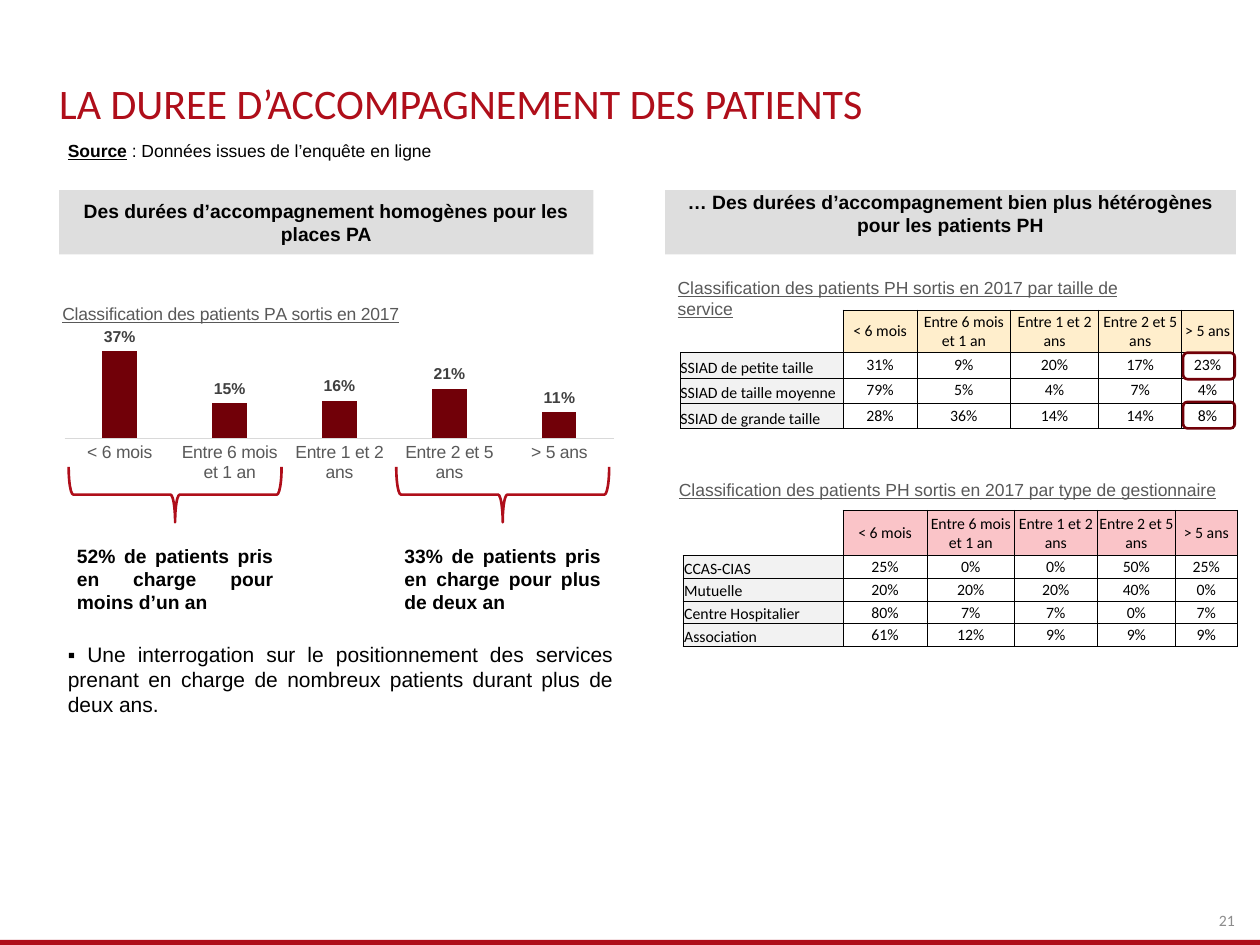
from lxml import etree
from pptx import Presentation
from pptx.chart.data import CategoryChartData
from pptx.dml.color import RGBColor
from pptx.enum.chart import XL_CHART_TYPE as CT, XL_LABEL_POSITION as LP, XL_TICK_MARK as TM
from pptx.enum.shapes import MSO_SHAPE as SHAPE
from pptx.enum.text import MSO_ANCHOR as ANCHOR, PP_ALIGN as ALIGN
from pptx.oxml import parse_xml
from pptx.oxml.ns import nsdecls, qn
from pptx.util import Inches, Pt

RED = RGBColor(0xAF, 0x0E, 0x1A)
DARK_RED = RGBColor(0x71, 0x00, 0x08)
BLACK = RGBColor(0, 0, 0)
WHITE = RGBColor(0xFF, 0xFF, 0xFF)
GREY = RGBColor(0x59, 0x59, 0x59)
LABEL_GREY = RGBColor(0x40, 0x40, 0x40)
PAGE_GREY = RGBColor(0x8C, 0x8C, 0x8C)
AXIS_GREY = RGBColor(0xD9, 0xD9, 0xD9)
BAND = RGBColor(0xDE, 0xDE, 0xDE)
ROW_HEAD = RGBColor(0xF2, 0xF2, 0xF2)
CREAM = RGBColor(0xFF, 0xEE, 0xCC)
PINK = RGBColor(0xFA, 0xC4, 0xC8)

prs = Presentation()
prs.slide_width, prs.slide_height = Inches(10), Inches(7.5)
W, H = prs.slide_width, prs.slide_height
s = prs.slides.add_slide(prs.slide_layouts[5])


def place(left, top, width, height):
    """Turn percentages of the slide into lengths."""
    return [int(v * size / 100) for v, size in zip((left, top, width, height), (W, H, W, H))]


def write(tf, runs, align=ALIGN.LEFT, anchor=ANCHOR.TOP, insets=(0.1, 0.05, 0.1, 0.05), **fmt):
    """Fill a text frame with one paragraph; each run is (text, extra format)."""
    tf.word_wrap = True
    tf.vertical_anchor = anchor
    for side, inset in zip(("left", "top", "right", "bottom"), insets):
        setattr(tf, f"margin_{side}", Inches(inset))
    p = tf.paragraphs[0]
    p.alignment = align
    for text, extra in runs:
        r = p.add_run()
        r.text = text
        look = {"name": "Arial", "size": 10, "color": BLACK, **fmt, **extra}
        r.font.color.rgb = look.pop("color")
        look["size"] = Pt(look["size"])
        for key, value in look.items():
            setattr(r.font, key, value)
    return p


# Bottom strip and page number
strip = s.shapes.add_shape(SHAPE.RECTANGLE, *place(0, 99.47, 100, 0.53))
strip.shadow.inherit = False
strip.fill.solid()
strip.fill.fore_color.rgb = RED
strip.line.fill.background()
page = s.shapes.add_textbox(*place(95.5, 96.4, 2.5, 2))
write(page.text_frame, [("21", {})], ALIGN.RIGHT, insets=(0, 0, 0, 0),
      name="Calibri", size=9, color=PAGE_GREY)

# Title
title = s.shapes.title
title.left, title.top, title.width, title.height = place(4.7, 8.93, 90.6, 4.67)
p = write(title.text_frame, [("LA DUREE D’ACCOMPAGNEMENT DES PATIENTS", {})], anchor=ANCHOR.MIDDLE,
          insets=(0, 0, 0, 0), name="Calibri", size=24, color=RED)
p.line_spacing = 0.85

# Source line
source = s.shapes.add_textbox(*place(4.4, 14.13, 62.5, 3.6))
write(source.text_frame, [("Source", {"bold": True, "underline": True}),
                          (" : Données issues de l’enquête en ligne", {})])

# Column headings
for left, width, anchor, top_inset, text in (
    (4.7, 42.4, ANCHOR.MIDDLE, 0.05, "Des durées d’accompagnement homogènes pour les places PA"),
    (52.8, 45.3, ANCHOR.TOP, 0,
     "… Des durées d’accompagnement bien plus hétérogènes pour les patients PH"),
):
    sp = s.shapes.add_shape(SHAPE.RECTANGLE, *place(left, 20.13, width, 6.8))
    sp.shadow.inherit = False
    sp.fill.solid()
    sp.fill.fore_color.rgb = BAND
    sp.line.fill.background()
    write(sp.text_frame, [(text, {})], ALIGN.CENTER, anchor, (0.04, top_inset, 0.04, 0.05),
          size=11, bold=True)

# Chart of PA patients
data = CategoryChartData(number_format="0%")
data.categories = ["< 6 mois", "Entre 6 mois et 1 an", "Entre 1 et 2 ans", "Entre 2 et 5 ans", "> 5 ans"]
data.add_series("Series 1", (0.37, 0.15, 0.16, 0.21, 0.11))
chart = s.shapes.add_chart(CT.COLUMN_CLUSTERED, *place(4.7, 31.2, 44.1, 23.73), data).chart
chart.has_legend = False
chart.font.name, chart.font.size = "Arial", Pt(10)
chart.has_title = True
r = chart.chart_title.text_frame.paragraphs[0].add_run()
r.text = "Classification des patients PA sortis en 2017"
for key, value in {"name": "Arial", "size": Pt(10), "bold": False, "underline": True}.items():
    setattr(r.font, key, value)
r.font.color.rgb = GREY

plot = chart.plots[0]
plot.gap_width, plot.overlap, plot.vary_by_categories = 219, -27, False
bars = plot.series[0]
bars.format.fill.solid()
bars.format.fill.fore_color.rgb = DARK_RED
labels = bars.data_labels
labels.show_value, labels.position = True, LP.OUTSIDE_END
labels.number_format, labels.number_format_is_linked = "0%", False
for key, value in {"name": "Arial", "size": Pt(9), "bold": True}.items():
    setattr(labels.font, key, value)
labels.font.color.rgb = LABEL_GREY

axis = chart.category_axis
axis.major_tick_mark = axis.minor_tick_mark = TM.NONE
axis.tick_labels.font.name, axis.tick_labels.font.size = "Arial", Pt(10)
axis.tick_labels.font.color.rgb = GREY
axis.format.line.color.rgb, axis.format.line.width = AXIS_GREY, Pt(0.75)
values = chart.value_axis
values.visible = values.has_major_gridlines = False
values.minimum_scale, values.maximum_scale = 0, 0.4

# Fixed places of the chart title and the plot
plot_area = chart._chartSpace.find(".//" + qn("c:plotArea"))
for parent, index, parts in (
    (chart.chart_title._element, 1, {"xMode": "edge", "yMode": "edge", "x": 0, "y": 0.02}),
    (plot_area, 0, {"layoutTarget": "inner", "xMode": "edge", "yMode": "edge",
                    "x": 0.01, "y": 0.22, "w": 0.99, "h": 0.42}),
):
    for old in parent.findall(qn("c:layout")):
        parent.remove(old)
    layout = parse_xml(f"<c:layout {nsdecls('c')}><c:manualLayout/></c:layout>")
    for tag, value in parts.items():
        etree.SubElement(layout[0], qn(f"c:{tag}")).set("val", str(value))
    parent.insert(index, layout)

# Tables of PH patients: place, column and row sizes in inches, header fill, inset, rows
HEADER = ["", "< 6 mois", "Entre 6 mois et 1 an", "Entre 1 et 2 ans", "Entre 2 et 5 ans", "> 5 ans"]
for box, cols, head_h, row_h, head_fill, inset, rows in (
    ((54, 32.8, 44, 12.53), (1.29, 0.59, 0.74, 0.7, 0.66, 0.41), 0.34, 0.2, CREAM, 0,
     [("SSIAD de petite taille", 31, 9, 20, 17, 23),
      ("SSIAD de taille moyenne", 79, 5, 4, 7, 4),
      ("SSIAD de grande taille", 28, 36, 14, 14, 8)]),
    ((54.2, 54, 43.9, 14.53), (1.27, 0.67, 0.69, 0.66, 0.62, 0.49), 0.36, 0.18, PINK, 0.01,
     [("CCAS-CIAS", 25, 0, 0, 50, 25), ("Mutuelle", 20, 20, 20, 40, 0),
      ("Centre Hospitalier", 80, 7, 7, 0, 7), ("Association", 61, 12, 9, 9, 9)]),
):
    table = s.shapes.add_table(len(rows) + 1, len(cols), *place(*box)).table
    for column, width in zip(table.columns, cols):
        column.width = Inches(width)
    for i, row in enumerate([HEADER] + rows):
        table.rows[i].height = Inches(row_h if i else head_h)
        for j, value in enumerate(row):
            cell = table.cell(i, j)
            corner, row_head = i == j == 0, i > 0 and j == 0
            cell.vertical_anchor = ANCHOR.BOTTOM if row_head else ANCHOR.MIDDLE
            cell.margin_left = cell.margin_top = cell.margin_right = Inches(inset)
            cell.margin_bottom = 0
            cell.fill.solid()
            cell.fill.fore_color.rgb = (WHITE if corner else head_fill if i == 0
                                        else ROW_HEAD if row_head else WHITE)
            p = cell.text_frame.paragraphs[0]
            p.alignment = ALIGN.LEFT if row_head else ALIGN.CENTER
            if not corner:
                r = p.add_run()
                r.text = f"{value}%" if i and j else value
                r.font.name, r.font.size = "Calibri", Pt(9)
                r.font.bold = False
                r.font.color.rgb = BLACK
            for k, side in enumerate("LRTB"):
                paint = ("<a:noFill/>" if corner and side in "LT"
                         else f'<a:solidFill><a:srgbClr val="{BLACK}"/></a:solidFill>')
                cell._tc.get_or_add_tcPr().insert(
                    k, parse_xml(f'<a:ln{side} {nsdecls("a")} w="6350">{paint}</a:ln{side}>'))

# Table captions
for box, ending in (((52.8, 28.67, 40.5, 5.87), "taille de service"),
                    ((52.9, 50, 49.3, 3.6), "type de gestionnaire")):
    caption = s.shapes.add_textbox(*place(*box))
    write(caption.text_frame, [(f"Classification des patients PH sortis en 2017 par {ending}", {})],
          color=GREY, underline=True)

# Braces with their comments
for left, text in ((5.7, "52% de patients pris en charge pour moins d’un an"),
                   (31.7, "33% de patients pris en charge pour plus de deux an")):
    brace = s.shapes.add_shape(SHAPE.LEFT_BRACE, *place(left + 6, 41.07, 4.4, 22.53))
    brace.rotation = 270
    brace.shadow.inherit = False
    brace.fill.background()
    brace.line.color.rgb, brace.line.width = RED, Pt(1.5)
    comment = s.shapes.add_textbox(*place(left, 56.67, 16.4, 9.2))
    write(comment.text_frame, [(text, {})], ALIGN.JUSTIFY, ANCHOR.MIDDLE, (0.04, 0.05, 0.04, 0.05),
          size=11, bold=True)

# Conclusion
conclusion = s.shapes.add_textbox(*place(4.4, 67.2, 45.3, 9.47))
p = write(conclusion.text_frame, [("▪ Une interrogation sur le positionnement des services prenant en charge "
                                   "de nombreux patients durant plus de deux ans.", {})],
          ALIGN.JUSTIFY, size=12)
p.space_after = Pt(4.5)

# Highlights on the "> 5 ans" column
for top in (37.33, 42.53):
    sp = s.shapes.add_shape(SHAPE.ROUNDED_RECTANGLE, *place(93.9, top, 4.1, 2.8))
    sp.shadow.inherit = False
    sp.fill.background()
    sp.line.color.rgb, sp.line.width = DARK_RED, Pt(1.5)

prs.save("out.pptx")
